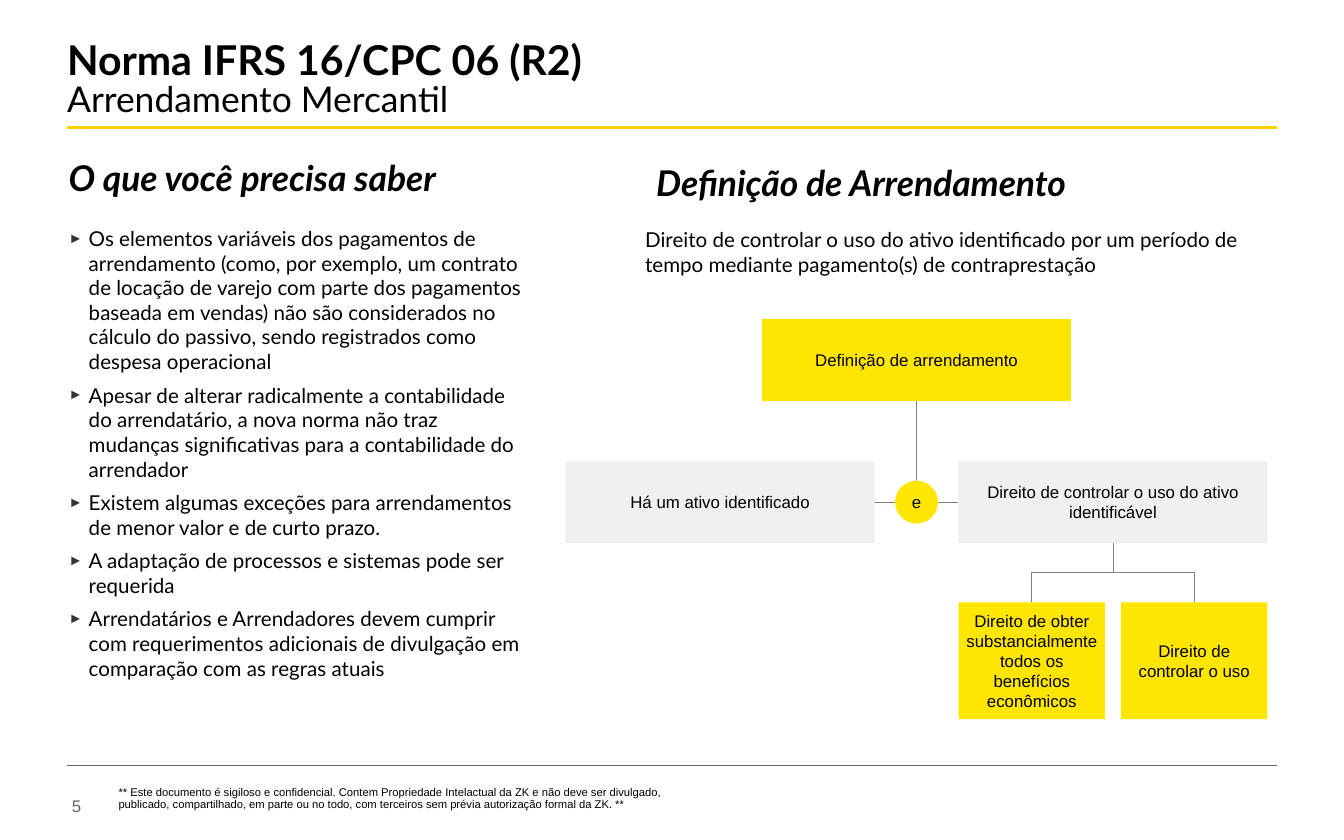
from lxml.etree import SubElement
from pptx import Presentation
from pptx.dml.color import RGBColor
from pptx.enum.shapes import MSO_CONNECTOR as LINK, MSO_SHAPE as SHAPE
from pptx.enum.text import MSO_ANCHOR as ANCHOR, PP_ALIGN as ALIGN
from pptx.oxml.ns import qn
from pptx.util import Pt

YELLOW, GOLD, PALE = "FFE600", "FFD200", "F0F0F0"
BLACK, GRAY, DARK = "000000", "808080", "646464"

TITLE = "Norma IFRS 16/CPC 06 (R2)"
SUB = "Arrendamento Mercantil"
LEFT_HEAD = "O que você precisa saber"
RIGHT_HEAD = "Definição de Arrendamento"
POINTS = [
    "Os elementos variáveis dos pagamentos de arrendamento (como, por exemplo, um contrato de locação de varejo com parte dos pagamentos baseada em vendas) não são considerados no cálculo do passivo, sendo registrados como despesa operacional",
    "Apesar de alterar radicalmente a contabilidade do arrendatário, a nova norma não traz mudanças significativas para a contabilidade do arrendador",
    "Existem algumas exceções para arrendamentos de menor valor e de curto prazo.",
    "A adaptação de processos e sistemas pode ser requerida",
    "Arrendatários e Arrendadores devem cumprir com requerimentos adicionais de divulgação em comparação com as regras atuais",
]
MEANING = "Direito de controlar o uso do ativo identificado por um período de tempo mediante pagamento(s) de contraprestação"
NOTE = "** Este documento é sigiloso e confidencial. Contem Propriedade Intelactual da ZK e não deve ser divulgado, publicado, compartilhado, em parte ou no todo, com terceiros sem prévia autorização formal da ZK. **"
PAGE = "5"

ROOT = "Definição de arrendamento"
TESTS = ["Há um ativo identificado", "Direito de controlar o uso do ativo identificável"]
RIGHTS = ["Direito de obter substancialmente todos os benefícios econômicos", "Direito de controlar o uso"]
AND = "e"

# Chart grid
MID, EDGE = 491, 679
WIDE, HIGH = 165.5, 44
SMALL, TALL, GAP = 78.5, 62.5, 8.5
ROWS = [171, 247, 322.75]
DOT = 23

deck = Presentation()
deck.slide_width, deck.slide_height = Pt(720), Pt(450)
slide = deck.slides.add_slide(deck.slide_layouts[6])
shapes = slide.shapes


def color(code):
    return RGBColor.from_string(code)


def style(par, size, face="Lato", code=BLACK, bold=False, italic=False):
    font = par.font
    font.name, font.size = face, Pt(size)
    font.bold, font.italic = bold, italic
    font.color.rgb = color(code)


def pad(frame, x, y):
    frame.margin_left = frame.margin_right = Pt(x)
    frame.margin_top = frame.margin_bottom = Pt(y)


def text(words, x, y, w, h, size, inset=(0, 0), **look):
    frame = shapes.add_textbox(Pt(x), Pt(y), Pt(w), Pt(h)).text_frame
    frame.word_wrap = True
    pad(frame, *inset)
    par = frame.paragraphs[0]
    par.text = words
    style(par, size, **look)
    return frame


def bullet(par):
    props = par._p.get_or_add_pPr()
    props.set("marL", str(Pt(10.8)))
    props.set("indent", str(Pt(-10.8)))
    tint = SubElement(props, qn("a:buClr"))
    SubElement(tint, qn("a:srgbClr"), val="333333")
    SubElement(props, qn("a:buSzPct"), val="70000")
    SubElement(props, qn("a:buFont"), typeface="Arial")
    SubElement(props, qn("a:buChar"), char="►")


def box(words, x, y, w, h, fill, kind=SHAPE.RECTANGLE, inset=3):
    item = shapes.add_shape(kind, Pt(x), Pt(y), Pt(w), Pt(h))
    item.shadow.inherit = False
    item.fill.solid()
    item.fill.fore_color.rgb = color(fill)
    item.line.fill.background()
    frame = item.text_frame
    frame.word_wrap = kind == SHAPE.RECTANGLE
    frame.vertical_anchor = ANCHOR.MIDDLE
    pad(frame, inset, inset)
    par = frame.paragraphs[0]
    par.text = words
    par.alignment = ALIGN.CENTER
    style(par, 9, face="Arial")
    return item


def line(x1, y1, x2, y2, code, width, kind=LINK.STRAIGHT):
    link = shapes.add_connector(kind, Pt(x1), Pt(y1), Pt(x2), Pt(y2))
    link.line.color.rgb = color(code)
    link.line.width = Pt(width)
    SubElement(link._element.spPr, qn("a:effectLst"))
    return link


def bend(x1, y1, x2, y2, preset):
    """Elbow that leaves downwards: a sideways box, turned about its centre."""
    long, wide = y2 - y1, abs(x2 - x1)
    x, y = (x1 + x2 - long) / 2, (y1 + y2 - wide) / 2
    props = line(x, y, x + long, y + wide, GRAY, 0.5, LINK.ELBOW)._element.spPr
    props.find(qn("a:prstGeom")).set("prst", preset)
    frame = props.find(qn("a:xfrm"))
    frame.set("rot", str((270 if x2 > x1 else 90) * 60000))
    if x2 > x1:
        frame.set("flipH", "1")


# Page frame
line(36, 68.5, 684, 68.5, GOLD, 1.5)
line(36, 409.75, 684, 409.75, DARK, 0.25)
text(PAGE, 38.5, 426.25, 54, 13, 9, face="Arial", code=DARK)
note = text(NOTE, 57.6, 419, 306, 26, 6, (5.9, 2.9), face="Arial")
note.paragraphs[0].line_spacing = 0.85

head = text("", 36, 22.3, 648, 56, 22).paragraphs[0]
head.line_spacing = 0.85
for words, size, bold in [(TITLE, 22, True), (SUB, 19, False)]:
    if head.runs:
        head.add_line_break()
    run = head.add_run()
    run.text = words
    run.font.size, run.font.bold = Pt(size), bold

# Text columns
text(LEFT_HEAD, 36.75, 83.5, 242, 28, 19, bold=True, italic=True)
text(RIGHT_HEAD, 345.6, 83.5, 247, 28, 19, (5.9, 2.9), bold=True, italic=True)
text(MEANING, 345.6, 121.7, 335.5, 27, 11)
body = text("", 36.75, 121, 248.5, 241, 11)
for i, words in enumerate(POINTS):
    par = body.add_paragraph() if i else body.paragraphs[0]
    par.text = words
    if i:
        par.space_before = Pt(4.7)
    bullet(par)
    style(par, 11)

# Definition chart
right = EDGE - WIDE
left = 2 * MID - EDGE
hub = ROWS[1] + HIGH / 2
for x in (left + WIDE, right):
    bend(MID, ROWS[0] + HIGH, x, hub, "bentConnector2")
box(ROOT, MID - WIDE / 2, ROWS[0], WIDE, HIGH, YELLOW)
for words, x in zip(TESTS, (left, right)):
    box(words, x, ROWS[1], WIDE, HIGH, PALE, inset=3.6)
for i, words in enumerate(RIGHTS):
    x = right + i * (SMALL + GAP)
    box(words, x, ROWS[2], SMALL, TALL, YELLOW)
    bend(right + WIDE / 2, ROWS[1] + HIGH, x + SMALL / 2, ROWS[2], "bentConnector3")
box(AND, MID - DOT / 2, hub - DOT / 2, DOT, DOT, YELLOW, SHAPE.OVAL)

deck.save("out.pptx")
